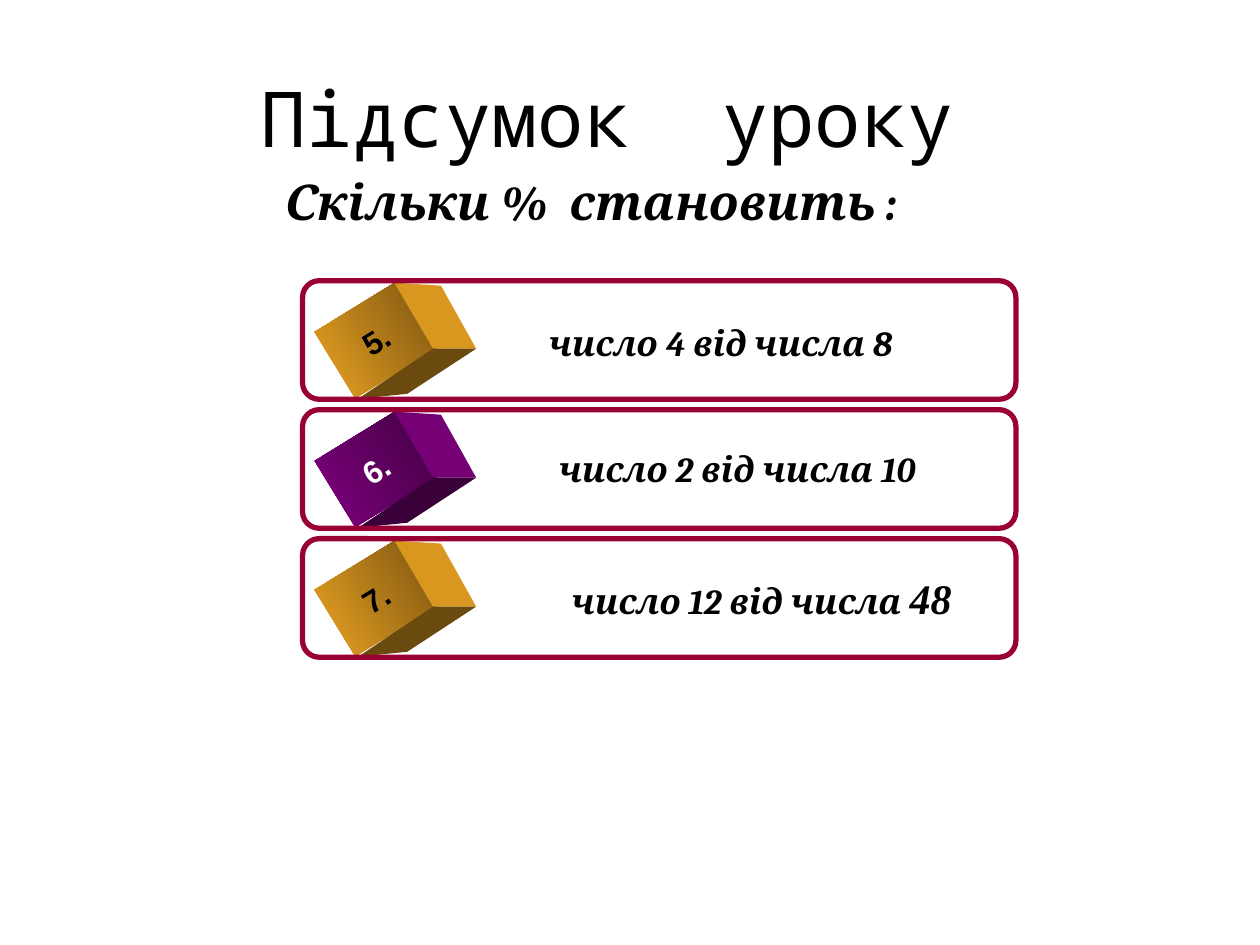
"""Build the lesson summary slide with three numbered percentage questions."""
from pptx import Presentation
from pptx.dml.color import RGBColor
from pptx.enum import shapes, text
from pptx.util import Cm, Pt


def rgb(value):
    return RGBColor.from_string(value)


def add_text(slide, box, runs, align, left=0.25, bold=True):
    sp = slide.shapes.add_textbox(*map(Cm, box))
    tf = sp.text_frame
    tf.word_wrap = True
    tf.margin_left = Cm(left)
    tf.vertical_anchor = text.MSO_ANCHOR.MIDDLE
    p = tf.paragraphs[0]
    p.alignment = align
    p.font.bold = p.font.italic = bold
    p.font.color.rgb = rgb("000000")
    for words, font, size in runs:
        r = p.add_run()
        r.text = words
        r.font.name, r.font.size = font, Pt(size)


prs = Presentation()
prs.slide_width, prs.slide_height = Cm(25.4), Cm(19.05)
s = prs.slides.add_slide(prs.slide_layouts[6])
center, left = text.PP_ALIGN.CENTER, text.PP_ALIGN.LEFT

add_text(s, (0.81, 0.76, 22.86, 3.18), [("Підсумок  уроку", "Noto Sans Mono", 44)], center, bold=False)
add_text(s, (2.31, 3.33, 19.2, 1.45), [("Скільки %  становить :", "Cambria", 28)], center)

gold = ("ECA422", "7A5411", "D99720", "6B4A0F", "000000")
purple = ("800080", "420042", "760076", "3A003A", "FFFFFF")
side = [(1.85, 0.04), (2.79, 0.1), (3.5, 1.37), (2.63, 1.37)]
base = [(2.63, 1.37), (3.5, 1.37), (2.11, 2.28), (1.12, 2.38)]
rows = [
    ("5.", gold, 10.34, 6.35, [("число 4 від числа 8", "Cambria", 20)]),
    ("6.", purple, 10.54, 8.89, [("число 2 від числа 10", "Cambria", 20)]),
    ("7.", gold, 10.8, 11.48, [("число 12 від числа ", "Cambria", 20), ("48", "Times New Roman", 24)]),
]
x = 6.1
for i, (number, colors, text_x, text_y, runs) in enumerate(rows):
    y = 5.66 + 2.6 * i
    light, dark, side_color, base_color, ink = colors

    front = s.shapes.add_shape(shapes.MSO_SHAPE.RECTANGLE, Cm(x + 0.51), Cm(y + 0.41), Cm(1.93), Cm(1.57))
    front.rotation = 328.5
    front.shadow.inherit = False
    front.line.fill.background()
    front.fill.gradient()
    front.fill.gradient_angle = 0
    for stop, color in zip(front.fill.gradient_stops, (light, dark)):
        stop.color.rgb = rgb(color)
    tf = front.text_frame
    tf.word_wrap = False
    p = tf.paragraphs[0]
    p.text = number
    p.alignment = center
    p.font.name, p.font.size, p.font.bold = "Arial", Pt(18), True
    p.font.color.rgb = rgb(ink)

    for points, color in ((side, side_color), (base, base_color)):
        corners = [(Cm(x + dx), Cm(y + dy)) for dx, dy in points]
        outline = s.shapes.build_freeform(*corners[0])
        outline.add_line_segments(corners[1:])
        face = outline.convert_to_shape()
        face.shadow.inherit = False
        face.fill.solid()
        face.fill.fore_color.rgb = rgb(color)
        face.line.fill.background()

    frame = s.shapes.add_shape(shapes.MSO_SHAPE.ROUNDED_RECTANGLE, Cm(x), Cm(y), Cm(14.38), Cm(2.39))
    frame.adjustments[0] = 0.14
    frame.shadow.inherit = False
    frame.fill.background()
    frame.line.color.rgb = rgb("990033")
    frame.line.width = Pt(3)

    add_text(s, (text_x, text_y, 9.12, 1.12), runs, left, left=0.73)

prs.save("out.pptx")
